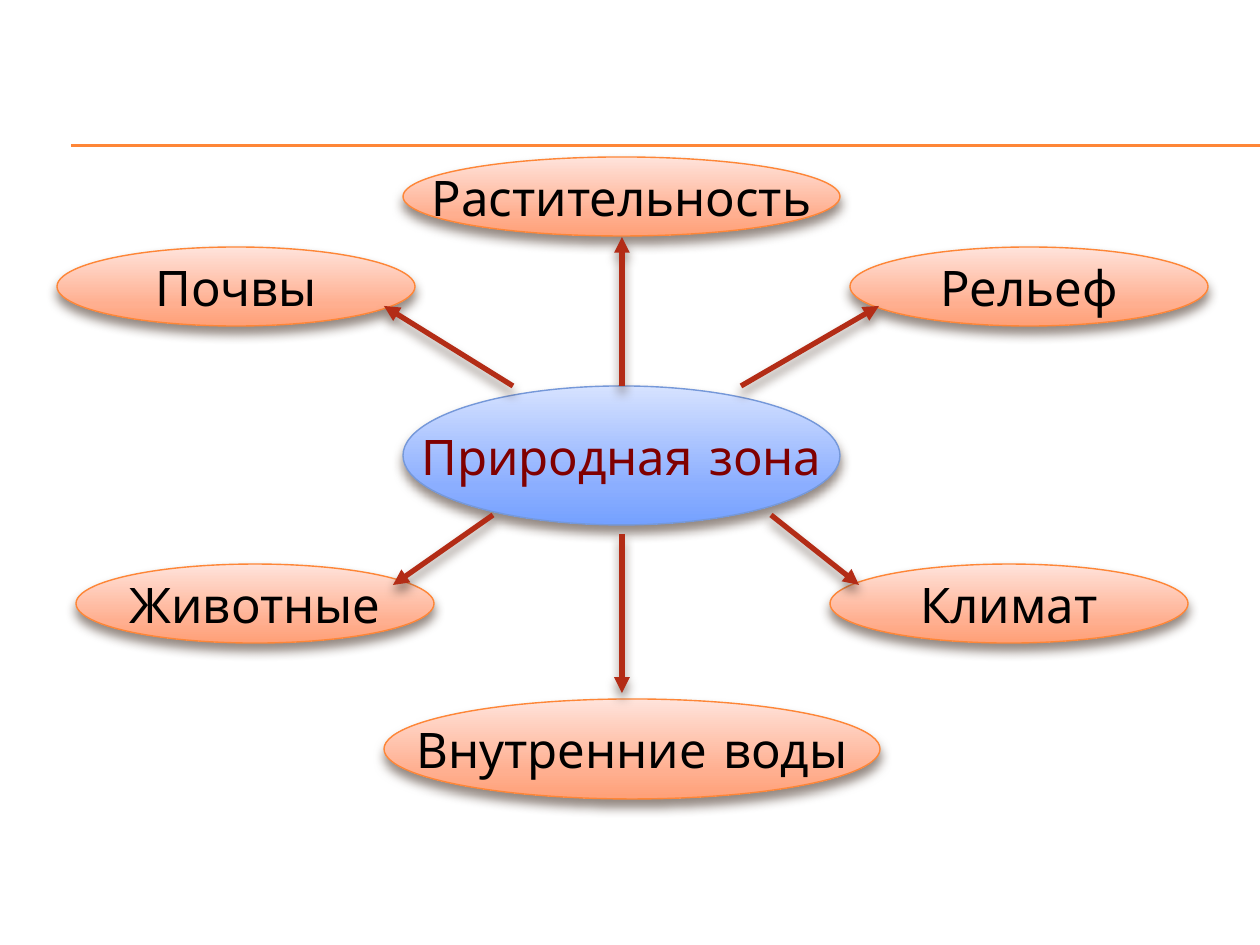
from dataclasses import dataclass

from lxml import etree
from pptx import Presentation
from pptx import util as u
from pptx.dml.color import RGBColor
from pptx.enum import shapes, text
from pptx.oxml import ns

PX = 914400 / 126


@dataclass(frozen=True)
class Theme:
    font: str = "Comic Neue"
    size: int = 28
    topic_text: str = "800000"
    factor_text: str = "000000"
    topic_line: str = "7598D9"
    factor_line: str = "FE8637"
    arrow: str = "B32C16"
    shadow: str = "4E3B30"
    topic_fill: tuple = ("D6E2FF", "8BAEFF", "75A1FF")
    factor_fill: tuple = ("FFE3DB", "FFAF90", "FFA077")
    stops: tuple = (0, 72, 100)
    rule_width: float = 0.75
    outline_width: float = 0.79
    arrow_width: float = 3


THEME = Theme()
TOPIC = ("Природная зона", 403, 386, 437, 139)
FACTORS = [
    ("Животные", 76, 564, 358, 79),
    ("Внутренние воды", 384, 699, 496, 100),
    ("Растительность", 403, 157, 437, 79),
    ("Почвы", 57, 247, 358, 79),
    ("Климат", 830, 564, 358, 79),
    ("Рельеф", 850, 247, 358, 79),
]
ARROWS = [
    (622, 534, 622, 693),
    (493, 515, 393, 585),
    (771, 515, 859, 585),
    (741, 386, 879, 306),
    (513, 386, 384, 306),
    (622, 386, 622, 237),
]


def px(*lengths):
    return [u.Emu(round(length * PX)) for length in lengths]


def add_xml(parent, tag, **attributes):
    child = etree.SubElement(parent, ns.qn(tag))
    for name, value in attributes.items():
        child.set(name, str(value))
    return child


def add_color(parent, color):
    return add_xml(parent, "a:srgbClr", val=color)


def fill_downward(shape, colors):
    """Shade a shape from top to bottom; call before its outline is set."""
    gradient = add_xml(shape.element.spPr, "a:gradFill", rotWithShape=1)
    stops = add_xml(gradient, "a:gsLst")
    for position, color in zip(THEME.stops, colors):
        add_color(add_xml(stops, "a:gs", pos=position * 1000), color)
    add_xml(gradient, "a:lin", ang=90 * 60000, scaled=0)


def set_line(line, color, width):
    line.color.rgb = RGBColor.from_string(color)
    line.width = u.Pt(width)


def add_shadow(effects):
    shadow = add_xml(effects, "a:outerShdw", blurRad=u.Pt(6), dist=u.Pt(4),
                     dir=90 * 60000, rotWithShape=0)
    add_xml(add_color(shadow, THEME.shadow), "a:alpha", val=60000)


def add_oval(page, label, bounds, fill, outline, text_color):
    oval = page.shapes.add_shape(shapes.MSO_SHAPE.OVAL, *px(*bounds))
    fill_downward(oval, fill)
    set_line(oval.line, outline, THEME.outline_width)
    add_shadow(add_xml(oval.element.spPr, "a:effectLst"))
    frame = oval.text_frame
    frame.word_wrap = False
    frame.vertical_anchor = text.MSO_ANCHOR.MIDDLE
    para = frame.paragraphs[0]
    para.alignment = text.PP_ALIGN.CENTER
    span = para.add_run()
    span.text = label
    span.font.name = THEME.font
    span.font.size = u.Pt(THEME.size)
    span.font.color.rgb = RGBColor.from_string(text_color)


def add_line(parent, ends, color, width):
    """Draw a straight line and return it with its empty effect list."""
    line = parent.shapes.add_connector(shapes.MSO_CONNECTOR.STRAIGHT, *px(*ends))
    set_line(line.line, color, width)
    return line, add_xml(line.element.spPr, "a:effectLst")


def add_arrow(group, ends):
    arrow, effects = add_line(group, ends, THEME.arrow, THEME.arrow_width)
    add_xml(arrow.line._get_or_add_ln(), "a:tailEnd", type="triangle")
    add_shadow(effects)


def main():
    deck = Presentation()
    deck.slide_width, deck.slide_height = px(1260, 945)
    page = deck.slides.add_slide(deck.slide_layouts[6])
    for y in (145, 146):
        add_line(page, (71, y, 1260, y), THEME.factor_line, THEME.rule_width)
    label, *bounds = TOPIC
    add_oval(page, label, bounds, THEME.topic_fill, THEME.topic_line,
             THEME.topic_text)
    for label, *bounds in FACTORS:
        add_oval(page, label, bounds, THEME.factor_fill, THEME.factor_line,
                 THEME.factor_text)
    arrows = page.shapes.add_group_shape()
    for ends in ARROWS:
        add_arrow(arrows, ends)
    deck.save("out.pptx")


if __name__ == "__main__":
    main()
